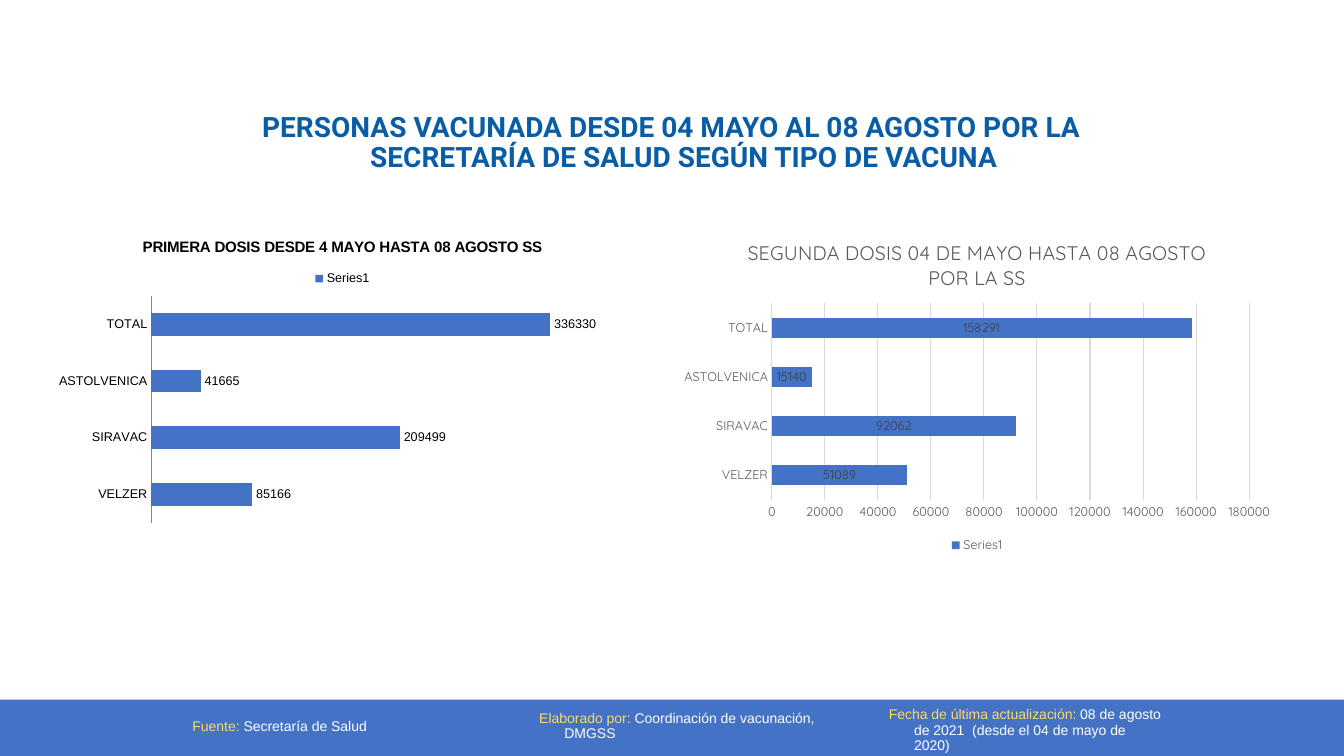
from dataclasses import dataclass

from pptx import Presentation
from pptx.chart.data import CategoryChartData
from pptx.dml.color import RGBColor
from pptx.enum.chart import XL_CHART_TYPE, XL_LABEL_POSITION, XL_LEGEND_POSITION, XL_TICK_MARK
from pptx.enum.shapes import MSO_SHAPE
from pptx.enum.text import MSO_ANCHOR, MSO_AUTO_SIZE, PP_ALIGN
from pptx.util import Cm, Pt

CLUSTER, STACK = XL_CHART_TYPE.BAR_CLUSTERED, XL_CHART_TYPE.BAR_STACKED
OUTSIDE, CENTER = XL_LABEL_POSITION.OUTSIDE_END, XL_LABEL_POSITION.CENTER
TOP, BOTTOM = XL_LEGEND_POSITION.TOP, XL_LEGEND_POSITION.BOTTOM
NO_TICK = XL_TICK_MARK.NONE
RECT = MSO_SHAPE.RECTANGLE
UPPER, MIDDLE = MSO_ANCHOR.TOP, MSO_ANCHOR.MIDDLE
NO_FIT = MSO_AUTO_SIZE.NONE
LEFT, MID = PP_ALIGN.LEFT, PP_ALIGN.CENTER

COLORS = {
    "blue": "4472C4",
    "navy": "095DA6",
    "gold": "FFD966",
    "white": "FFFFFF",
    "black": "000000",
    "gray": "595959",
    "dark": "404040",
    "axis": "868686",
    "grid": "D9D9D9",
}
HEAD = "PERSONAS VACUNADA DESDE 04 MAYO AL 08 AGOSTO POR LA SECRETARÍA DE SALUD SEGÚN TIPO DE VACUNA"
BRANDS = ["VELZER", "SIRAVAC", "ASTOLVENICA", "TOTAL"]


@dataclass
class Note:
    left: float
    top: float
    width: float
    label: str
    text: str


@dataclass
class Graph:
    box: tuple[float, float, float, float]
    kind: int
    title: str
    size: float
    bold: bool
    font: str
    color: str
    tint: str
    line: str
    values: tuple[int, ...]
    overlap: int
    legend: int
    place: int
    step: int
    top: int


NOTES = [
    Note(4.6, 17.8, 8.23, "Fuente: ", "Secretaría de Salud"),
    Note(13.34, 17.8, 8.23, "Elaborado por: ", "Coordinación de vacunación, DMGSS"),
    Note(22.15, 17.9, 7.42, "Fecha de última actualización: ",
         "08 de agosto de 2021  (desde el 04 de mayo de 2020)"),
]
GRAPHS = [
    Graph((1.19, 5.61, 14.88, 7.72), CLUSTER,
          "PRIMERA DOSIS DESDE 4 MAYO HASTA 08 AGOSTO SS", 10.8, True,
          "Arial", "black", "black", "axis",
          (85166, 209499, 41665, 336330), -25, TOP, OUTSIDE, 0, 400000),
    Graph((16.94, 5.61, 15.37, 8.43), STACK,
          "SEGUNDA DOSIS 04 DE MAYO HASTA 08 AGOSTO POR LA SS", 14, False,
          "Quicksand", "gray", "dark", "grid",
          (51089, 92062, 15140, 158291), 100, BOTTOM, CENTER, 20000, 180000),
]


def shade(name: str) -> RGBColor:
    return RGBColor.from_string(COLORS[name])


def style(font, face: str, size: float, color: str, bold: bool = False) -> None:
    font.name, font.size, font.bold = face, Pt(size), bold
    font.color.rgb = shade(color)


def set_frame(frame, anchor: int) -> None:
    frame.word_wrap = True
    frame.auto_size = NO_FIT
    frame.vertical_anchor = anchor


def set_par(par, align: int) -> None:
    par.alignment = align
    par.line_spacing = 0.9
    par.space_before = Pt(10)
    props = par._p.get_or_add_pPr()
    props.set("marL", str(Cm(0.635)))
    props.set("indent", str(Cm(-0.635)))


def add_title(slide) -> None:
    title = slide.shapes.title
    title.left, title.top, title.width, title.height = Cm(6.12), Cm(2.72), Cm(21.59), Cm(2.21)
    frame = title.text_frame
    set_frame(frame, UPPER)
    frame.text = HEAD
    par = frame.paragraphs[0]
    set_par(par, MID)
    style(par.font, "Roboto", 20, "navy", True)


def add_band(slide) -> None:
    band = slide.shapes.add_shape(RECT, 0, Cm(17.63), Cm(33.87), Cm(1.42))
    band.shadow.inherit = False
    band.fill.solid()
    band.fill.fore_color.rgb = shade("blue")
    band.line.fill.background()


def add_note(slide, note: Note) -> None:
    box = slide.shapes.add_textbox(Cm(note.left), Cm(note.top), Cm(note.width), Cm(1.02))
    frame = box.text_frame
    set_frame(frame, MIDDLE)
    frame.margin_top = frame.margin_bottom = 0
    par = frame.paragraphs[0]
    set_par(par, LEFT)
    par.font.name, par.font.size = "Arial", Pt(10)
    for text, color in ((note.label, "gold"), (note.text, "white")):
        run = par.add_run()
        run.text = text
        run.font.color.rgb = shade(color)


def add_graph(slide, graph: Graph) -> None:
    data = CategoryChartData()
    data.categories = BRANDS
    data.add_series("Series1", graph.values)
    box = [Cm(part) for part in graph.box]
    chart = slide.shapes.add_chart(graph.kind, *box, data).chart
    style(chart.font, graph.font, 9, graph.color)

    chart.has_title = True
    frame = chart.chart_title.text_frame
    frame.text = graph.title
    style(frame.paragraphs[0].font, graph.font, graph.size, graph.color, graph.bold)
    chart.chart_title.include_in_layout = False

    chart.has_legend = True
    chart.legend.position = graph.legend
    chart.legend.include_in_layout = False

    plot = chart.plots[0]
    plot.gap_width, plot.overlap = 150, graph.overlap
    plot.vary_by_categories = False
    plot.has_data_labels = True
    labels = plot.data_labels
    labels.show_value = True
    labels.position = graph.place
    style(labels.font, graph.font, 9, graph.tint)
    fill = plot.series[0].format.fill
    fill.solid()
    fill.fore_color.rgb = shade("blue")

    names, scale = chart.category_axis, chart.value_axis
    for axis in (names, scale):
        axis.major_tick_mark = axis.minor_tick_mark = NO_TICK
    names.format.line.color.rgb = shade(graph.line)
    names.format.line.width = Pt(0.75)
    scale.minimum_scale, scale.maximum_scale = 0, graph.top
    scale.visible = scale.has_major_gridlines = graph.step > 0
    if graph.step:
        scale.major_unit = graph.step
        scale.format.line.fill.background()
        line = scale.major_gridlines.format.line
        line.color.rgb, line.width = shade("grid"), Pt(0.75)


def main() -> None:
    deck = Presentation()
    deck.slide_width, deck.slide_height = Cm(33.87), Cm(19.05)
    slide = deck.slides.add_slide(deck.slide_layouts[5])
    add_band(slide)
    add_title(slide)
    for note in NOTES:
        add_note(slide, note)
    for graph in GRAPHS:
        add_graph(slide, graph)
    deck.save("out.pptx")


if __name__ == "__main__":
    main()
